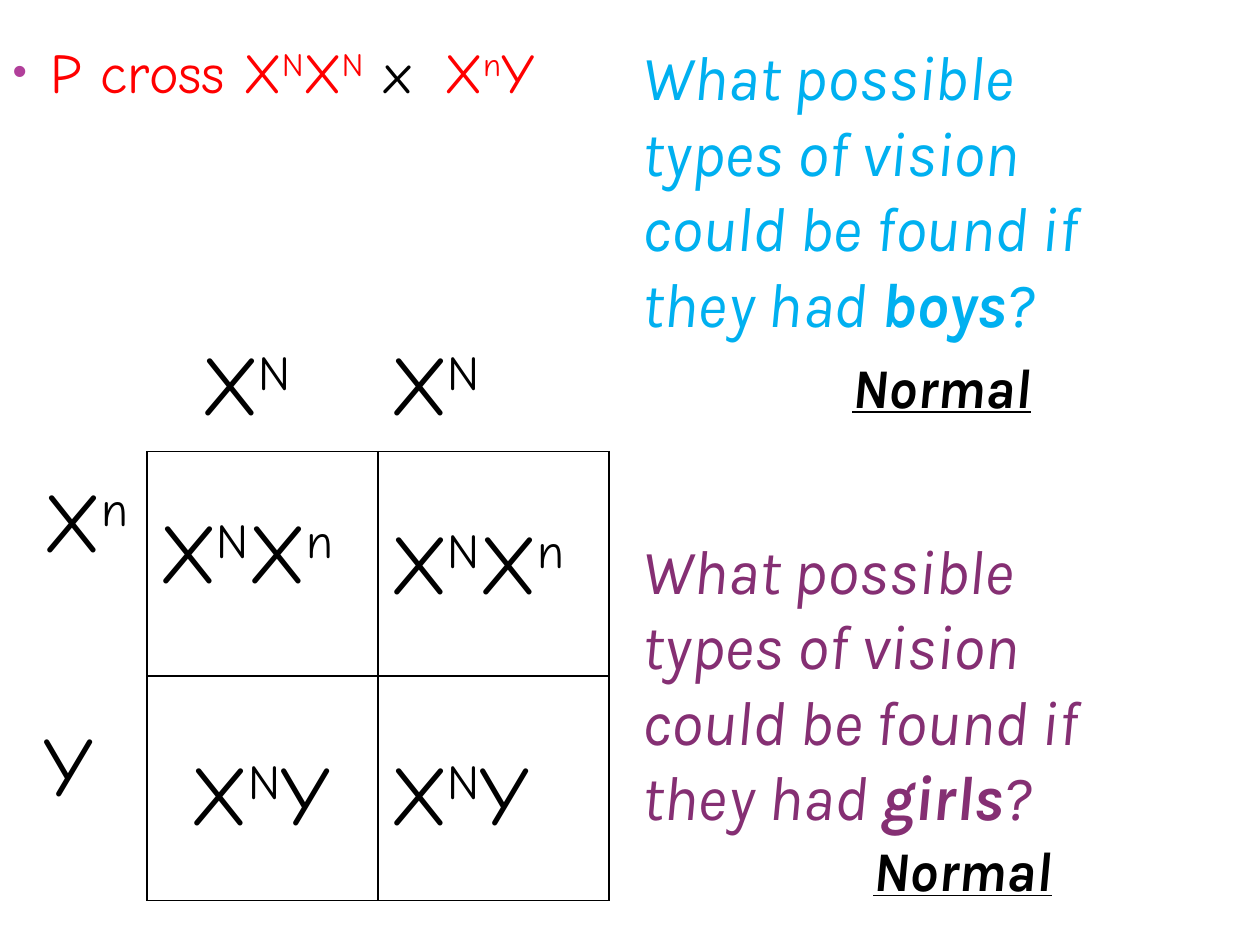
from dataclasses import dataclass

from lxml import etree
from pptx import Presentation
from pptx.dml.color import RGBColor
from pptx.enum.text import MSO_AUTO_SIZE
from pptx.oxml.ns import qn
from pptx.util import Emu, Pt

NO_AUTOFIT = MSO_AUTO_SIZE.NONE
GROW = MSO_AUTO_SIZE.SHAPE_TO_FIT_TEXT
PX = 9525  # EMU in one px, 96 px to the inch


@dataclass(frozen=True)
class Theme:
    allele_font: str = "Comic Neue"
    question_font: str = "Karla"
    ink: str = "000000"
    cross: str = "FF0000"
    bullet: str = "B13F9A"
    boys: str = "00B0F0"
    girls: str = "852F73"
    allele_size: int = 48
    question_size: int = 36
    small_size: int = 32


THEME = Theme()


def write(paragraph, marked, font, size, color, emphasis="raised"):
    """Write text in which every second piece between ^ marks is raised or bold."""
    for i, piece in enumerate(marked.split("^")):
        if piece:
            run = paragraph.add_run()
            run.text = piece
            if i % 2 and emphasis == "raised":
                run.font._element.set("baseline", "30000")
            elif i % 2:
                run.font.bold = True
    paragraph.font.name = font
    paragraph.font.size = Pt(size)
    paragraph.font.color.rgb = RGBColor.from_string(color)


def add_box(left, top, width, height):
    """Add a wrapping text box and return its text frame."""
    box = slide.shapes.add_textbox(*(Emu(n * PX) for n in (left, top, width, height)))
    box.text_frame.word_wrap = True
    box.text_frame.auto_size = GROW
    return box.text_frame


prs = Presentation()
prs.slide_width, prs.slide_height = Emu(960 * PX), Emu(720 * PX)
slide = prs.slides.add_slide(prs.slide_layouts[1])
title = slide.shapes.title._element
title.getparent().remove(title)

# Parental cross, as a bullet in the body placeholder
body = slide.placeholders[1]
body.left, body.top, body.width, body.height = (Emu(n * PX) for n in (0, 24, 848, 654))
body.text_frame.auto_size = NO_AUTOFIT
cross = body.text_frame.paragraphs[0]
cross.space_before = Pt(0)
bullet = cross._p.get_or_add_pPr()
bullet.set("marL", str(29 * PX))
bullet.set("indent", str(-29 * PX))
bullet_color = etree.SubElement(bullet, qn("a:buClr"))
etree.SubElement(bullet_color, qn("a:srgbClr"), val=THEME.bullet)
etree.SubElement(bullet, qn("a:buSzPct"), val="73000")
etree.SubElement(bullet, qn("a:buChar"), char="•")
write(cross, "P cross X^N^X^N ^x ^^X^n^Y", THEME.allele_font, THEME.small_size, THEME.cross)
for run in cross.runs:
    if run.text == "x ":
        run.font.color.rgb = RGBColor.from_string(THEME.ink)
    # Widen the gaps on both sides of the multiplication sign
    if run.text.endswith(" "):
        run.font._element.set("spc", "430" if run.text == "x " else "300")

# Punnett square
square = slide.shapes.add_table(
    2, 2, Emu(112 * PX), Emu(344 * PX), Emu(352 * PX), Emu(342 * PX)).table
square.first_row = square.horz_banding = False
for cell in square.iter_cells():
    cell.fill.background()
    cell_props = cell._tc.get_or_add_tcPr()
    for i, side in enumerate(("a:lnL", "a:lnR", "a:lnT", "a:lnB")):
        border = etree.Element(qn(side), w=str(Pt(1)))
        border_fill = etree.SubElement(border, qn("a:solidFill"))
        etree.SubElement(border_fill, qn("a:srgbClr"), val=THEME.ink)
        cell_props.insert(i, border)

# Alleles of the parents and genotypes of the offspring
alleles = [
    ((144, 248, 312, 87), ["X^N\t\t^X^N"]),
    ((24, 352, 112, 275), ["X^n", "Y"]),
    ((112, 376, 184, 87), ["X^N^X^n"]),
    ((136, 560, 144, 87), ["X^N^Y"]),
    ((288, 384, 184, 87), ["X^N^X^n"]),
    ((288, 560, 176, 87), ["X^N^Y"]),
]
for place, lines in alleles:
    frame = add_box(*place)
    for i, line in enumerate(lines):
        paragraph = frame.add_paragraph() if i else frame.paragraphs[0]
        if i:
            paragraph.space_before = Pt(82)
        write(paragraph, line, THEME.allele_font, THEME.allele_size, THEME.ink)

# Questions about the children
questions = [
    ("boys", (480, 24, 376, 300), THEME.boys),
    ("girls", (480, 400, 368, 300), THEME.girls),
]
for children, place, color in questions:
    question = add_box(*place).paragraphs[0]
    write(question, f"What possible types of vision could be found if they had ^{children}^?",
          THEME.question_font, THEME.question_size, color, "bold")
    question.font.italic = True

# Answers
for left, top in ((640, 264), (656, 632)):
    answer = add_box(left, top, 167, 61).paragraphs[0]
    write(answer, "Normal", THEME.question_font, THEME.small_size, THEME.ink)
    answer.font.bold = answer.font.italic = answer.font.underline = True

prs.save("out.pptx")
